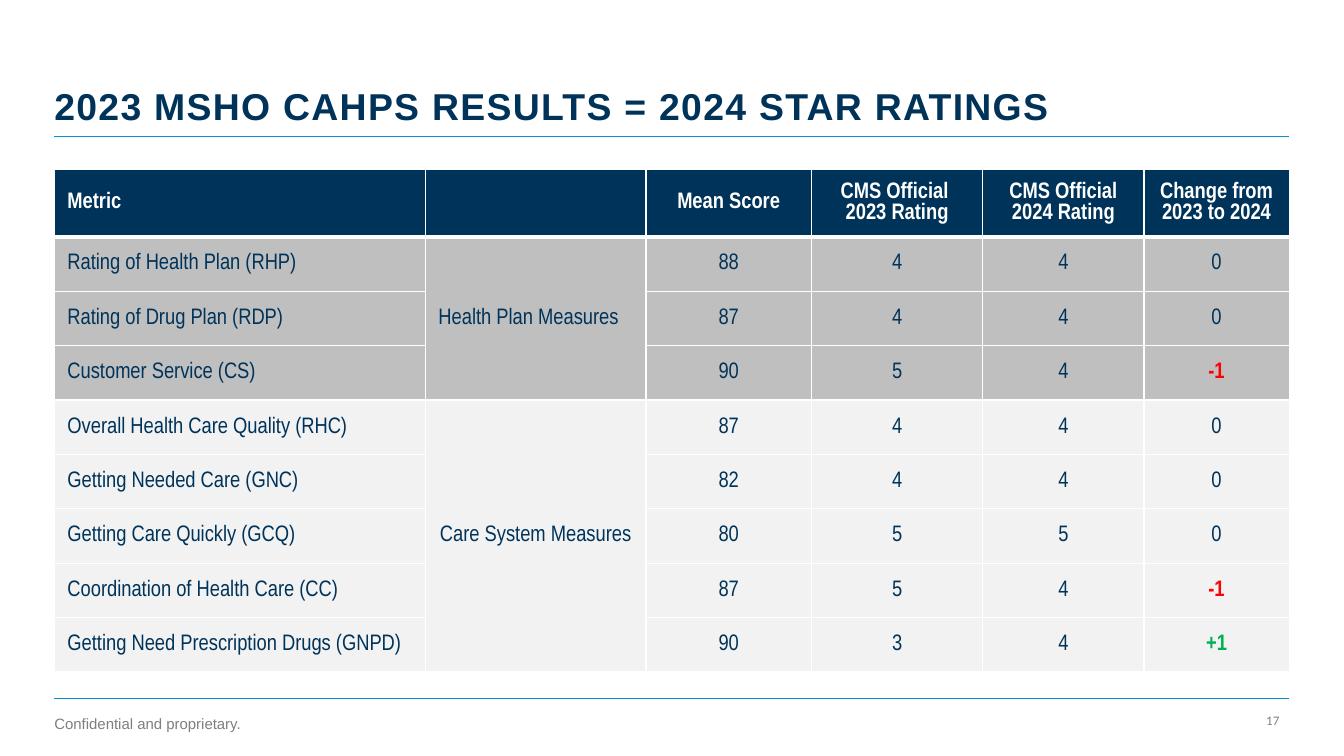
from dataclasses import dataclass

from lxml.etree import SubElement
from pptx import Presentation
from pptx.dml.color import RGBColor as Rgb
from pptx.enum.shapes import MSO_CONNECTOR as Connector
from pptx.enum.text import MSO_ANCHOR as Anchor, MSO_AUTO_SIZE as AutoSize, PP_ALIGN as Align
from pptx.oxml.ns import qn
from pptx.util import Cm, Pt


@dataclass(frozen=True)
class Theme:
    """Colours, fonts and type sizes of the slide."""
    navy: str = "003359"
    blue: str = "0094D7"
    white: str = "FFFFFF"
    grey: str = "7F7F7F"
    plan_fill: str = "BFBFBF"
    care_fill: str = "F2F2F2"
    loss: str = "FF0000"
    gain: str = "00B050"
    heading_font: str = "Arial"
    table_font: str = "Arial Narrow"
    number_font: str = "Calibri"
    title_size: float = 26.7
    table_size: float = 16
    footer_size: float = 10.7
    number_size: float = 9.3


THEME = Theme()
LEFT, WIDTH = 1.37, 31.12
COLUMN_WIDTHS = [9.35, 5.56, 4.17, 4.32, 4.06, 3.66]
HEADER_HEIGHT, ROW_HEIGHT = 1.7, 1.37
HEADINGS = ["Metric", "", "Mean Score", "CMS Official \v2023 Rating",
            "CMS Official 2024 Rating", "Change from 2023 to 2024"]
GROUPS = [
    ("Health Plan Measures", Align.LEFT, THEME.plan_fill, [
        ("Rating of Health Plan (RHP)", 88, 4, 4),
        ("Rating of Drug Plan (RDP)", 87, 4, 4),
        ("Customer Service (CS)", 90, 5, 4),
    ]),
    ("Care System Measures", Align.CENTER, THEME.care_fill, [
        ("Overall Health Care Quality (RHC)", 87, 4, 4),
        ("Getting Needed Care (GNC)", 82, 4, 4),
        ("Getting Care Quickly (GCQ)", 80, 5, 5),
        ("Coordination of Health Care (CC)", 87, 5, 4),
        ("Getting Need Prescription Drugs (GNPD)", 90, 3, 4),
    ]),
]


def style_text(frame, font, size, color, bold=False, align=Align.LEFT):
    """Format every run of a text frame."""
    for paragraph in frame.paragraphs:
        paragraph.alignment = align
        for run in paragraph.runs:
            run.font.name = font
            run.font.size = Pt(size)
            run.font.bold = bold
            run.font.color.rgb = Rgb.from_string(color)


def set_margins(frame, side, end):
    """Set the insets of a text frame or cell in centimetres."""
    frame.margin_left = frame.margin_right = Cm(side)
    frame.margin_top = frame.margin_bottom = Cm(end)


def add_rule(slide, left, top, width):
    """Draw a thin horizontal rule."""
    rule = slide.shapes.add_connector(
        Connector.STRAIGHT, Cm(left), Cm(top), Cm(left + width), Cm(top))
    rule.line.color.rgb = Rgb.from_string(THEME.blue)
    rule.line.width = Pt(0.75)
    SubElement(rule._element.spPr, qn("a:effectLst"))


def add_heading(slide, left, top, width, height):
    """Place the title with the rule below it."""
    title = slide.shapes.title
    title.left, title.top, title.width, title.height = Cm(left), Cm(top), Cm(25.83), Cm(height)
    frame = title.text_frame
    frame.text = "2023 MSHO CAHPS RESULTS = 2024 STAR RATINGS"
    frame.word_wrap = True
    frame.auto_size = AutoSize.NONE
    frame.vertical_anchor = Anchor.BOTTOM
    set_margins(frame, 0, 0)
    style_text(frame, THEME.heading_font, THEME.title_size, THEME.navy, bold=True)
    heading = frame.paragraphs[0]
    heading.line_spacing = 0.9
    heading.runs[0]._r.get_or_add_rPr().set("spc", "90")
    add_rule(slide, left, top + height + 0.2, width)


def add_note(slide, box, text, margins, font, size, align):
    """Place one grey footer text."""
    frame = slide.shapes.add_textbox(*map(Cm, box)).text_frame
    frame.text = text
    frame.word_wrap = True
    frame.vertical_anchor = Anchor.BOTTOM
    set_margins(frame, *margins)
    style_text(frame, font, size, THEME.grey, align=align)


def add_footer(slide, left, top, width):
    """Place the footer rule, the notice and the slide number."""
    add_rule(slide, left, top, width)
    add_note(slide, (left, top + 0.33, 5.54, 0.53), "Confidential and proprietary.",
             (0, 0), THEME.heading_font, THEME.footer_size, Align.LEFT)
    add_note(slide, (left + width - 7.9, top + 0.36, 7.9, 0.51), "17",
             (0.25, 0.13), THEME.number_font, THEME.number_size, Align.RIGHT)


def style_cell(cell, fill, top_line=1, bottom_line=1):
    """Give a cell its insets, white borders and fill."""
    set_margins(cell, 0.33, 0.18)
    cell.vertical_anchor = Anchor.MIDDLE
    properties = cell._tc.get_or_add_tcPr()
    for side, points in (("L", 1), ("R", 1), ("T", top_line), ("B", bottom_line)):
        border = SubElement(properties, qn(f"a:ln{side}"), w=str(Pt(points)))
        paint = SubElement(border, qn("a:solidFill"))
        SubElement(paint, qn("a:srgbClr"), val=THEME.white)
    cell.fill.solid()
    cell.fill.fore_color.rgb = Rgb.from_string(fill)


def write_cell(cell, text, color, bold=False, align=Align.CENTER):
    """Write text into a table cell."""
    cell.text_frame.text = text
    style_text(cell.text_frame, THEME.table_font, THEME.table_size, color, bold, align)


def write_metric(table, row, metric, mean, before, after):
    """Fill one metric row, with the rating change worked out."""
    change = after - before
    write_cell(table.cell(row, 0), metric, THEME.navy, align=Align.LEFT)
    for column, score in enumerate((mean, before, after), start=2):
        write_cell(table.cell(row, column), str(score), THEME.navy)
    color = THEME.gain if change > 0 else THEME.loss if change < 0 else THEME.navy
    write_cell(table.cell(row, 5), f"{change:+d}" if change else "0", color, bold=change != 0)


def add_ratings(slide, left, top, width):
    """Build the ratings table."""
    count = sum(len(metrics) for _, _, _, metrics in GROUPS)
    height = HEADER_HEIGHT + count * ROW_HEIGHT
    table = slide.shapes.add_table(
        count + 1, len(HEADINGS), Cm(left), Cm(top), Cm(width), Cm(height)).table
    for column, column_width in zip(table.columns, COLUMN_WIDTHS):
        column.width = Cm(column_width)
    for index, row in enumerate(table.rows):
        row.height = Cm(ROW_HEIGHT if index else HEADER_HEIGHT)

    for column, heading in enumerate(HEADINGS):
        cell = table.cell(0, column)
        style_cell(cell, THEME.navy, bottom_line=3)
        write_cell(cell, heading, THEME.white, True, Align.CENTER if column else Align.LEFT)

    first = 1
    for group, align, fill, metrics in GROUPS:
        for row, metric in enumerate(metrics, start=first):
            for cell in table.rows[row].cells:
                style_cell(cell, fill, top_line=3 if row == 1 else 1)
            write_metric(table, row, *metric)
        last = first + len(metrics) - 1
        table.cell(first, 1).merge(table.cell(last, 1))
        write_cell(table.cell(first, 1), group, THEME.navy, align=align)
        first = last + 1


def main():
    """Build and save the slide."""
    deck = Presentation()
    deck.slide_width, deck.slide_height = Cm(33.87), Cm(19.05)
    slide = deck.slides.add_slide(deck.slide_layouts[5])
    add_heading(slide, LEFT, 0.41, WIDTH, 2.84)
    add_ratings(slide, LEFT, 4.27, WIDTH)
    add_footer(slide, LEFT, 17.6, WIDTH)
    deck.save("out.pptx")


if __name__ == "__main__":
    main()
